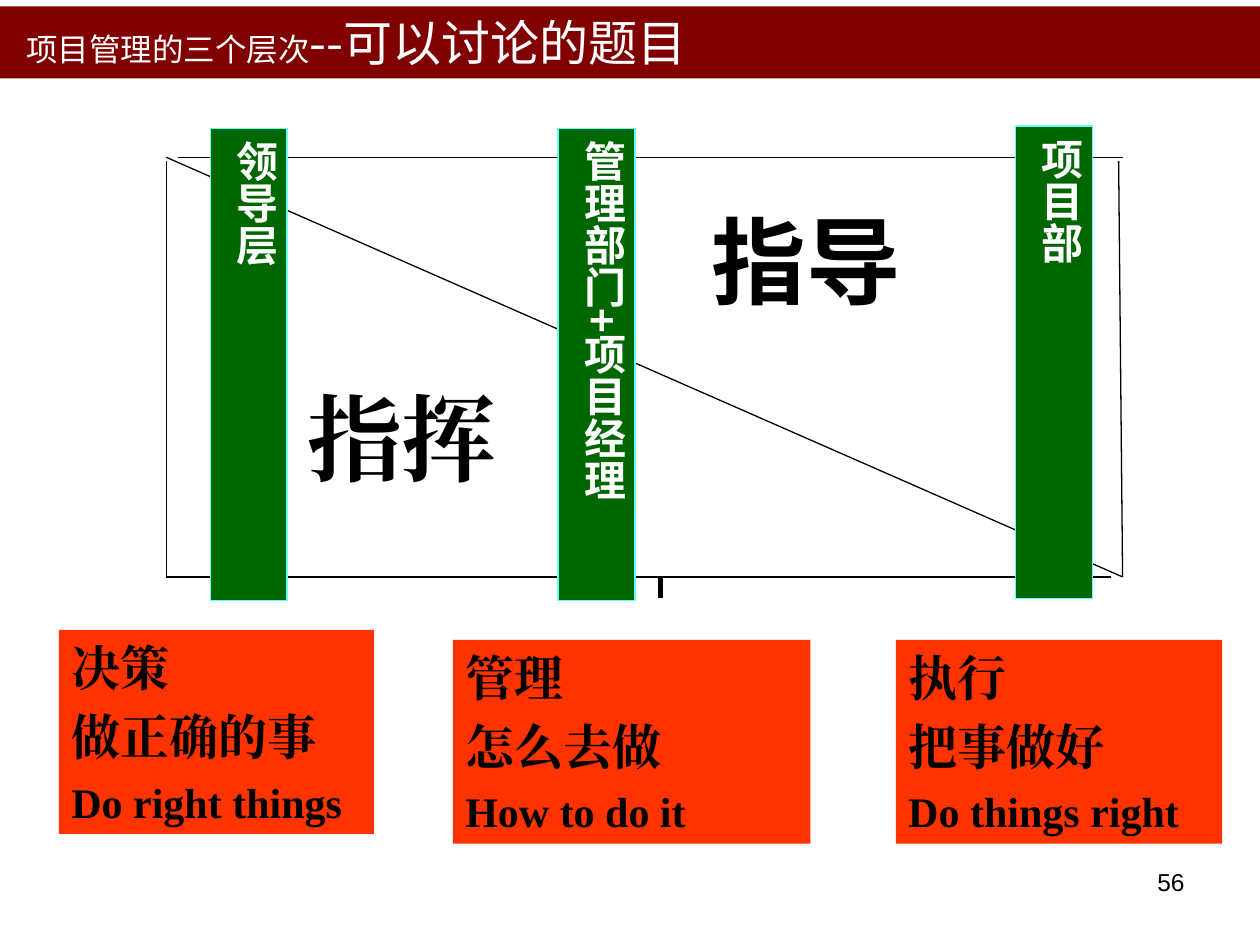
import pptx
import pptx.util
import pptx.dml.color
import pptx.enum.shapes
import pptx.enum.text
import pptx.oxml
import pptx.oxml.ns
from pptx.util import Cm, Pt

COLORS = {"title": "800000", "bar": "006600", "edge": "66FFFF",
          "box": "FF3300", "ink": "000000", "white": "FFFFFF"}
SANS, SERIF = "Noto Sans CJK SC", "Times New Roman"
ALIGN, ANCHOR = pptx.enum.text.PP_ALIGN, pptx.enum.text.MSO_ANCHOR

TITLE = [("项目管理的三个层次", 18), ("--可以讨论的题目", 28)]
LEFT, TOP, RIGHT, BOTTOM = 3.35, 3.17, 22.63, 11.63
GAP = 0.23
LINES = [
    (LEFT, TOP, RIGHT, BOTTOM, 0.75),
    (LEFT + GAP, TOP, RIGHT, TOP, 0.75),
    (RIGHT - 0.08, TOP + 0.08, RIGHT, BOTTOM, 0.75),
    (LEFT, TOP + 0.08, LEFT, BOTTOM, 0.75),
    (LEFT, BOTTOM, RIGHT - GAP, BOTTOM, 0.75),
    (13.31, BOTTOM, 13.31, BOTTOM + 0.43, 3),
]
BARS = [("领导层", 4.24, 2.59), ("管理部门+项目经理", 11.25, 2.59), ("项目部", 20.47, 2.54)]
BAR_W, BAR_H = 1.55, 9.52
BOXES = [
    (("决策", "做正确的事", "Do right things"), 1.19, 12.7, 6.35),
    (("管理", "怎么去做", "How to do it"), 9.13, 12.9, 7.21),
    (("执行", "把事做好", "Do things right"), 18.06, 12.9, 6.58),
]
BOX_H = 4.11
BOX_SIZES = (28, 28, 24)
WORDS = [("指导", 14.1, 3.96, SANS), ("指挥", 5.94, 7.54, SERIF)]


def rgb(name):
    return pptx.dml.color.RGBColor.from_string(COLORS[name])


def add_run(p, text, size, font, color, bold=False):
    r = p.add_run()
    r.text = text
    r.font.size, r.font.name, r.font.bold = Pt(size), font, bold
    r.font.color.rgb = rgb(color)
    ea = pptx.oxml.parse_xml(f'<a:ea {pptx.oxml.ns.nsdecls("a")} typeface="{font}"/>')
    r.font._element.find(pptx.oxml.ns.qn("a:latin")).addnext(ea)


def set_frame(sp, anchor, align=ALIGN.LEFT):
    tf = sp.text_frame
    tf.word_wrap, tf.vertical_anchor = True, anchor
    tf.paragraphs[0].alignment = align
    return tf


def add_rect(slide, x, y, w, h, fill, edge=None):
    sp = slide.shapes.add_shape(pptx.enum.shapes.MSO_SHAPE.RECTANGLE, Cm(x), Cm(y), Cm(w), Cm(h))
    sp.shadow.inherit = False
    sp.fill.solid()
    sp.fill.fore_color.rgb = rgb(fill)
    if edge:
        sp.line.color.rgb = rgb(edge)
        sp.line.width = Pt(0.75)
    else:
        sp.line.fill.background()
    return sp


def add_line(slide, x1, y1, x2, y2, width):
    line = slide.shapes.add_connector(pptx.enum.shapes.MSO_CONNECTOR.STRAIGHT,
                                      Cm(x1), Cm(y1), Cm(x2), Cm(y2))
    line.line.color.rgb = rgb("ink")
    line.line.width = Pt(width)
    line._element.spPr.append(
        pptx.oxml.parse_xml(f'<a:effectLst {pptx.oxml.ns.nsdecls("a")}/>'))


def main():
    prs = pptx.Presentation()
    prs.slide_width, prs.slide_height = Cm(25.4), Cm(19.05)
    slide = prs.slides.add_slide(prs.slide_layouts[6])

    number = slide.shapes.add_textbox(Cm(18.2), Cm(17.35), Cm(5.93), Cm(1.32))
    tf = set_frame(number, ANCHOR.TOP, ALIGN.RIGHT)
    add_run(tf.paragraphs[0], "56", 14, "Arial", "ink")

    for line in LINES:
        add_line(slide, *line)

    for texts, x, y, w in BOXES:
        tf = set_frame(add_rect(slide, x, y, w, BOX_H, "box"), ANCHOR.MIDDLE)
        for i, (text, size) in enumerate(zip(texts, BOX_SIZES)):
            p = tf.add_paragraph() if i else tf.paragraphs[0]
            p.alignment = ALIGN.LEFT
            p.space_before = Pt(6 if i else 0)
            add_run(p, text, size, SERIF, "ink", True)

    for text, x, y, font in WORDS:
        sp = slide.shapes.add_textbox(Cm(x), Cm(y), Cm(7.82), Cm(2.54))
        tf = set_frame(sp, ANCHOR.MIDDLE)
        add_run(tf.paragraphs[0], text, 54, font, "ink", True)

    tf = set_frame(add_rect(slide, 0, 0.13, 25.4, 1.45, "title"), ANCHOR.MIDDLE)
    tf.margin_left = Cm(0.53)
    for text, size in TITLE:
        add_run(tf.paragraphs[0], text, size, SANS, "white")

    for text, x, y in BARS:
        sp = add_rect(slide, x, y, BAR_W, BAR_H, "bar", "edge")
        tf = set_frame(sp, ANCHOR.TOP)
        tf._txBody.bodyPr.set("vert", "eaVert")
        add_run(tf.paragraphs[0], text, 24, SANS, "white", True)

    prs.save("out.pptx")


if __name__ == "__main__":
    main()
